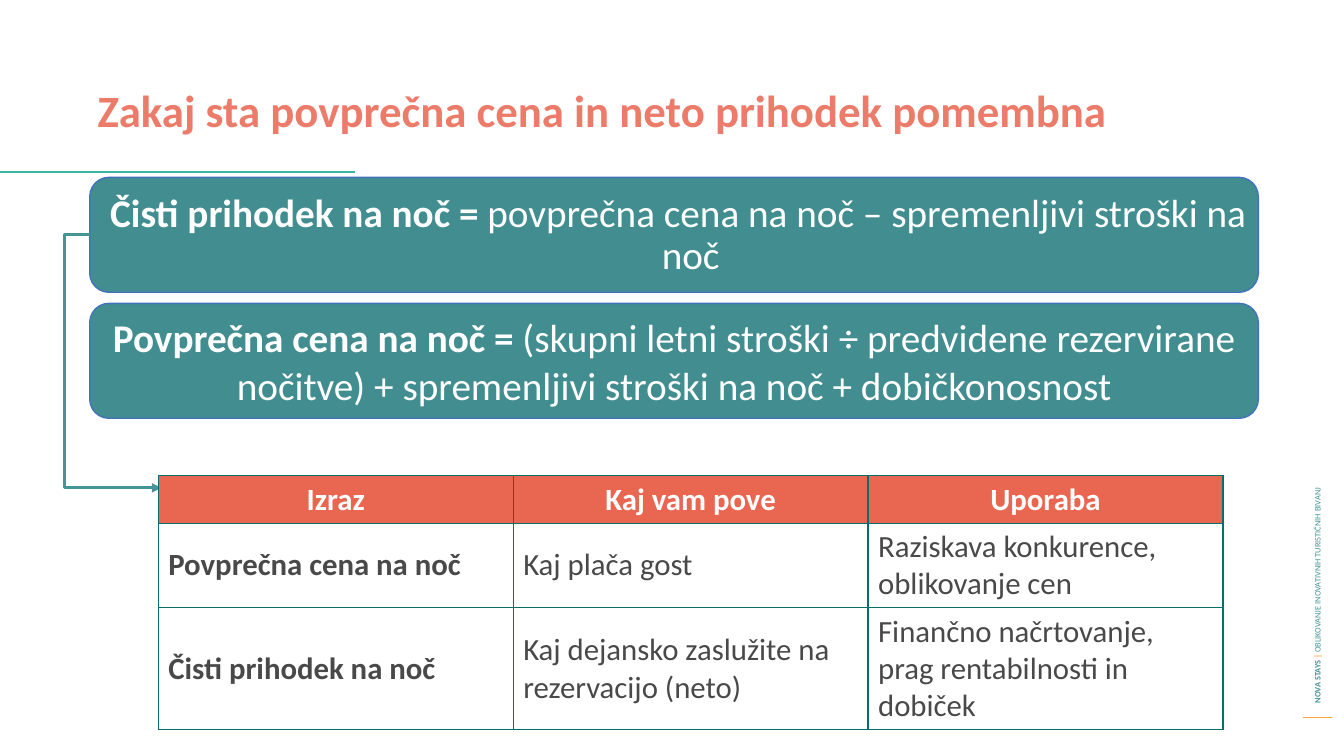
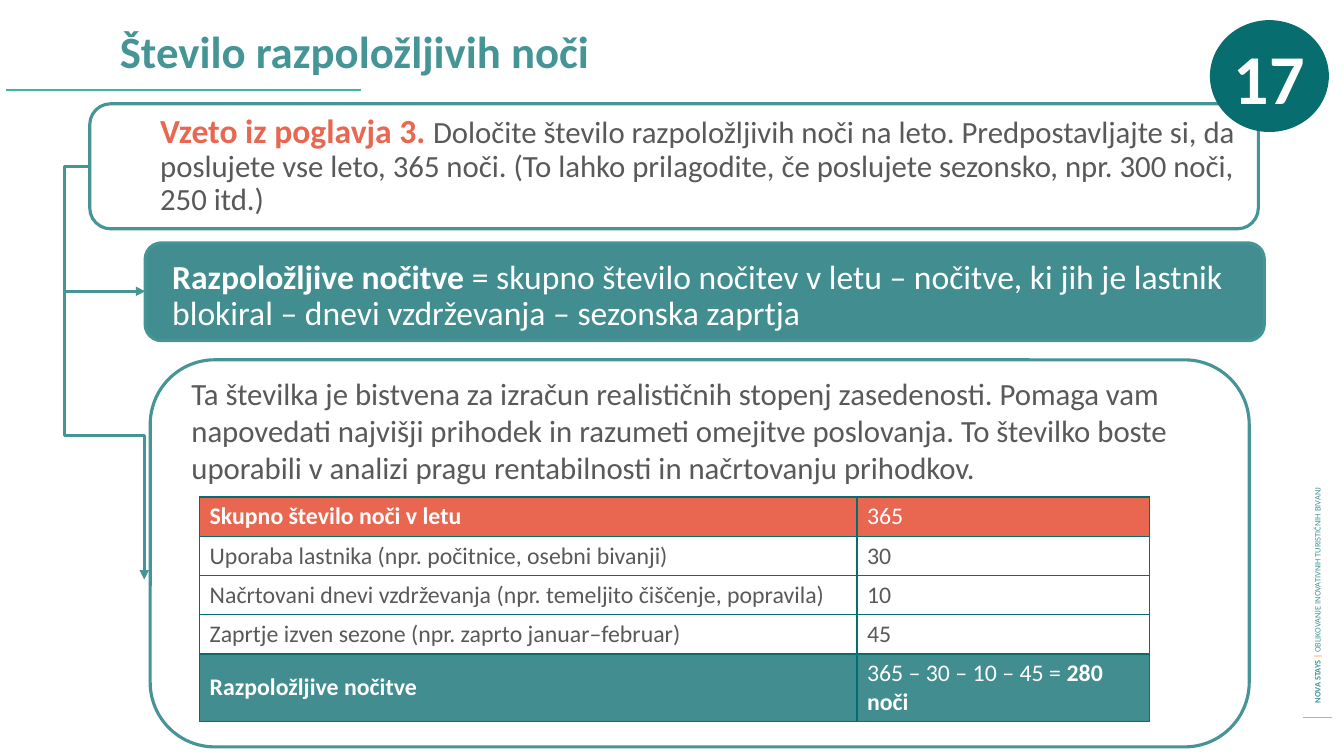
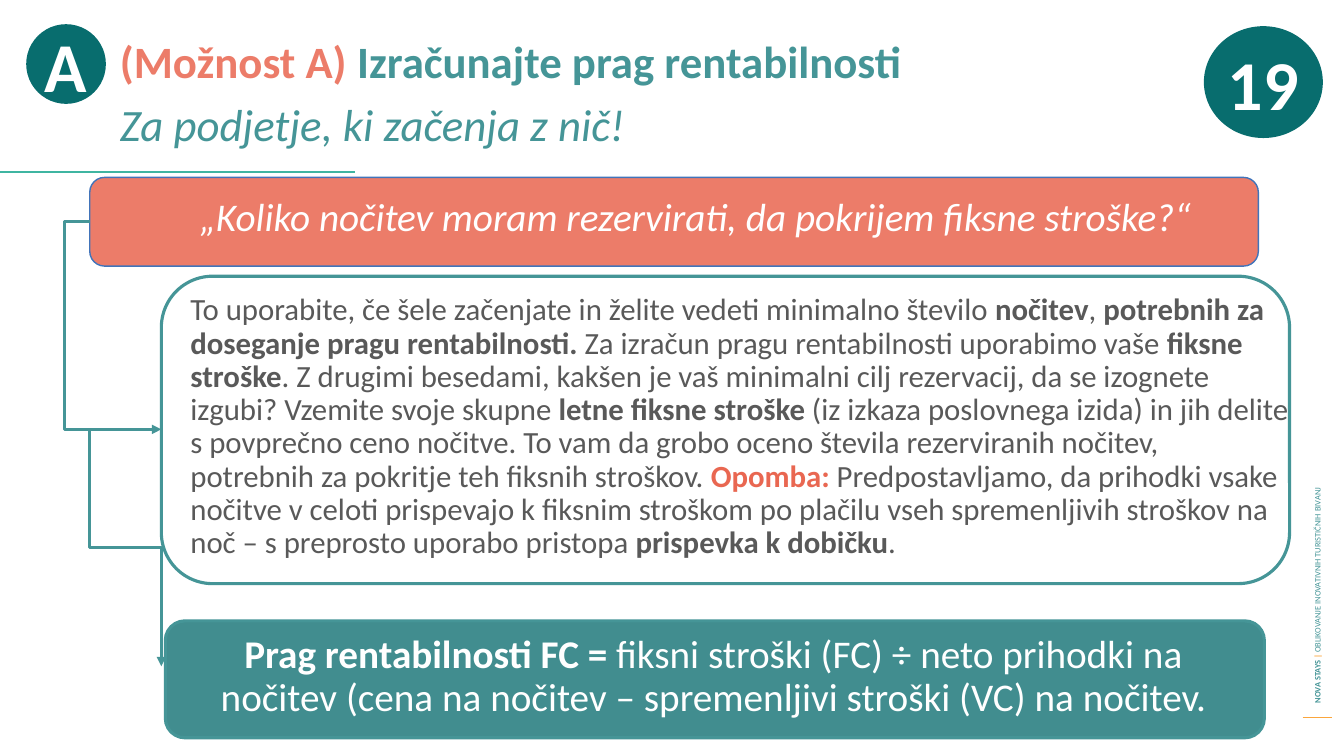
import pptx
import pptx.util
import pptx.dml.color
import pptx.enum.shapes
import pptx.enum.text
from lxml import etree
from pptx.oxml.ns import qn

Inches = pptx.util.Inches
Pt = pptx.util.Pt
SHAPE = pptx.enum.shapes.MSO_SHAPE
CONNECTOR = pptx.enum.shapes.MSO_CONNECTOR
ALIGN = pptx.enum.text.PP_ALIGN
ANCHOR = pptx.enum.text.MSO_ANCHOR

FONT = "Calibri"
TEAL, DEEP, PANEL, RULE = "459597", "086D6E", "418D8F", "3FB5A1"
CORAL, SALMON, AMBER, BLUE = "E96751", "EC7C69", "FBA63D", "4174BA"
GREY, DARK, WHITE = "595959", "494949", "FFFFFF"
OUTSET = 0.25
BOLD = {"bold": True}
FORMULA = {"size": 28, "color": WHITE}
BODY = {"size": 22, "color": GREY}
TITLE = {"size": 32, "color": TEAL, "bold": True}


def rgb(value):
    return pptx.dml.color.RGBColor.from_string(value)


def add_runs(p, runs, base):
    """Add (text, overrides) runs, or plain strings, on top of the base format."""
    for run in runs:
        text, changes = (run, {}) if isinstance(run, str) else run
        r = p.add_run()
        r.text = text
        formats = {"name": FONT, "bold": False, **base, **changes}
        r.font.color.rgb = rgb(formats.pop("color"))
        formats["size"] = Pt(formats["size"])
        for key, value in formats.items():
            setattr(r.font, key, value)


def fill_text(tf, paragraphs, base, anchor=ANCHOR.TOP, hanging=False, **layout):
    tf.word_wrap = True
    tf.vertical_anchor = anchor
    for i, runs in enumerate(paragraphs):
        p = tf.paragraphs[0] if i == 0 else tf.add_paragraph()
        if hanging:
            pPr = p._p.get_or_add_pPr()
            pPr.set("marL", str(Inches(0.25)))
            pPr.set("indent", str(-Inches(0.25)))
        for key, value in layout.items():
            setattr(p, key, value)
        if i:
            p.space_before = Pt(10)
        add_runs(p, runs, base)


def add_text(s, box, paragraphs, base, **layout):
    sp = s.shapes.add_textbox(*map(Inches, box))
    fill_text(sp.text_frame, paragraphs, base, **layout)
    return sp


def add_panel(s, box, fill=None, line=TEAL, width=2.25,
              kind=SHAPE.FLOWCHART_ALTERNATE_PROCESS):
    sp = s.shapes.add_shape(kind, *map(Inches, box))
    sp.shadow.inherit = False
    if fill:
        sp.fill.solid()
        sp.fill.fore_color.rgb = rgb(fill)
    else:
        sp.fill.background()
    if line:
        sp.line.color.rgb = rgb(line)
        sp.line.width = Pt(width)
    else:
        sp.line.fill.background()
    return sp


def add_badge(s, box, label):
    sp = add_panel(s, box, DEEP, line=None, kind=SHAPE.OVAL)
    tf = sp.text_frame
    fill_text(tf, [[label]], {"size": 50, "color": WHITE, "bold": True},
              anchor=ANCHOR.MIDDLE, alignment=ALIGN.CENTER)
    tf.word_wrap = False
    for side in ("left", "top", "right", "bottom"):
        setattr(tf, "margin_" + side, 0)


def add_line(s, start, end, color, width, kind=CONNECTOR.STRAIGHT):
    cxn = s.shapes.add_connector(kind, *map(Inches, (*start, *end)))
    cxn.line.color.rgb = rgb(color)
    cxn.line.width = Pt(width)
    etree.SubElement(cxn._element.spPr, qn("a:effectLst"))
    return cxn


def add_elbow(s, start, end, down_first=False):
    """Arrow that leaves to the left of start, or downwards if down_first."""
    (x1, y1), (x2, y2) = start, end
    adjust = -OUTSET / (x2 - x1)
    if down_first:
        adjust = 0.5
        cx, cy, half_w, half_h = (x1 + x2) / 2, (y1 + y2) / 2, (y2 - y1) / 2, (x2 - x1) / 2
        start, end = (cx + half_w, cy - half_h), (cx - half_w, cy + half_h)
    cxn = add_line(s, start, end, TEAL, 2.25, CONNECTOR.ELBOW)
    spPr = cxn._element.spPr
    if down_first:
        spPr.find(qn("a:xfrm")).set("rot", str(270 * 60000))
    guides = spPr.find(qn("a:prstGeom")).find(qn("a:avLst"))
    etree.SubElement(guides, qn("a:gd"), name="adj1", fmla=f"val {round(adjust * 100000)}")
    etree.SubElement(spPr.find(qn("a:ln")), qn("a:tailEnd"), type="triangle")


def add_borders(cell):
    tcPr = cell._tc.get_or_add_tcPr()
    for side in "LRTB":
        ln = etree.SubElement(tcPr, qn("a:ln" + side), w=str(Pt(1)))
        solid = etree.SubElement(ln, qn("a:solidFill"))
        etree.SubElement(solid, qn("a:srgbClr"), val=DEEP)


def add_grid(s, left, top, widths, heights, rows, size, color, fills, centred_head=False):
    """Bordered table; fills maps a row number to its colour and gives it white text."""
    frame = s.shapes.add_table(len(rows), len(widths), *map(
        Inches, (left, top, sum(widths), sum(heights))))
    table = frame.table
    table.first_row = table.horz_banding = False
    for column, width in zip(table.columns, widths):
        column.width = Inches(width)
    for i, (row, height) in enumerate(zip(rows, heights)):
        table.rows[i].height = Inches(height)
        for j, runs in enumerate(row):
            cell = table.cell(i, j)
            add_borders(cell)
            cell.vertical_anchor = ANCHOR.MIDDLE
            if i in fills:
                cell.fill.solid()
                cell.fill.fore_color.rgb = rgb(fills[i])
            else:
                cell.fill.background()
            p = cell.text_frame.paragraphs[0]
            if centred_head and i == 0:
                p.alignment = ALIGN.CENTER
            add_runs(p, runs, {"size": size, "color": WHITE if i in fills else color})


def add_slide(prs, title_at, title, rule_at):
    """Blank slide with the side footer, the title and its rule."""
    s = prs.slides.add_slide(prs.slide_layouts[6])
    add_line(s, (12.92, 7.12), (13.21, 7.12), AMBER, 0.75)
    footer = add_text(s, (10.18, 4.09, 5.77, 0.2), [[
        ("NOVA STAYS ", BOLD), ("| ", {"color": "FBA63B", "bold": True}),
        "OBLIKOVANJE INOVATIVNIH TURISTIČNIH BIVANJ"]],
        {"size": 6, "color": TEAL}, anchor=ANCHOR.MIDDLE)
    footer.rotation = 270
    add_text(s, (*title_at, 11.61, 0.88), title, TITLE, line_spacing=0.9)
    x, y = rule_at
    add_line(s, rule_at, (x + 3.52, y), RULE, 1.5)
    return s


def build_price_slide(prs):
    s = add_slide(prs, (0.87, 0.83),
                  [[("Zakaj sta povprečna cena in neto prihodek pomembna", {"color": SALMON})]],
                  (0, 1.71))
    add_panel(s, (0.89, 1.76, 11.59, 1.14), PANEL, BLUE, 1)
    add_text(s, (0.92, 1.87, 11.61, 0.88), [[
        ("Čisti prihodek na noč = ", BOLD),
        "povprečna cena na noč – spremenljivi stroški na noč"]],
        FORMULA, hanging=True, alignment=ALIGN.CENTER, line_spacing=0.9)
    average = add_panel(s, (0.89, 3.01, 11.59, 1.14), PANEL, BLUE, 1)
    fill_text(average.text_frame, [[
        ("Povprečna cena na noč = ", BOLD),
        "(skupni letni stroški ÷ predvidene rezervirane nočitve) + spremenljivi "
        "stroški na noč + dobičkonosnost"]],
        FORMULA, anchor=ANCHOR.MIDDLE, alignment=ALIGN.CENTER, space_after=Pt(12))
    add_elbow(s, (0.89, 2.33), (1.6, 4.84))
    add_grid(s, 1.57, 4.72, [3.52] * 3, [0.47, 0.84, 1.21], [
        [[(head, BOLD)] for head in ("Izraz", "Kaj vam pove", "Uporaba")],
        [[("Povprečna cena na noč", BOLD)], ["Kaj plača gost"],
         ["Raziskava konkurence, oblikovanje cen"]],
        [[("Čisti prihodek na noč", BOLD)], ["Kaj dejansko zaslužite na rezervacijo (neto)"],
         ["Finančno načrtovanje, prag rentabilnosti in dobiček"]],
    ], 22, DARK, {0: CORAL}, centred_head=True)


def build_nights_slide(prs):
    s = add_slide(prs, (1.09, 0.25), [["Število razpoložljivih noči"]], (0.06, 0.89))
    add_panel(s, (1.44, 2.41, 11.1, 0.97), PANEL)
    add_panel(s, (0.89, 1.03, 11.59, 1.24))
    add_text(s, (1.49, 1.09, 10.89, 0.88), [[
        ("Vzeto iz poglavja 3. ", {"size": 24, "color": CORAL, "bold": True}),
        "Določite število razpoložljivih noči na leto. Predpostavljajte si, da poslujete "
        "vse leto, 365 noči. (To lahko prilagodite, če poslujete sezonsko, npr. 300 noči, "
        "250 itd.)"]], BODY, line_spacing=0.9)
    add_text(s, (1.61, 2.5, 10.93, 0.88), [[
        ("Razpoložljive nočitve ", BOLD),
        "= skupno število nočitev v letu – nočitve, ki jih je lastnik blokiral – dnevi "
        "vzdrževanja – sezonska zaprtja"]],
        {"size": 24, "color": WHITE}, anchor=ANCHOR.MIDDLE, line_spacing=0.9)
    add_panel(s, (1.49, 3.57, 10.9, 3.84))
    add_elbow(s, (0.89, 1.65), (1.44, 2.89))
    add_elbow(s, (0.64, 2.89), (1.43, 5.75), down_first=True)
    add_text(s, (1.8, 3.67, 10.74, 0.88), [[
        "Ta številka je bistvena za izračun realističnih stopenj zasedenosti. Pomaga vam "
        "napovedati najvišji prihodek in razumeti omejitve poslovanja. To številko boste "
        "uporabili v analizi pragu rentabilnosti in načrtovanju prihodkov."]], BODY)
    add_grid(s, 1.98, 4.93, [6.52, 2.9], [0.39] * 4 + [0.67], [
        [[("Skupno število noči v letu", BOLD)], ["365"]],
        [["Uporaba lastnika (npr. počitnice, osebni bivanji)"], ["30"]],
        [["Načrtovani dnevi vzdrževanja (npr. temeljito čiščenje, popravila)"], ["10"]],
        [["Zaprtje izven sezone (npr. zaprto januar–februar)"], ["45"]],
        [[("Razpoložljive nočitve", BOLD)], ["365 – 30 – 10 – 45 =", (" 280 noči", BOLD)]],
    ], 17, GREY, {0: CORAL, 4: PANEL})
    add_badge(s, (12, 0.2, 1.18, 1.11), "17")


def build_break_even_slide(prs):
    s = add_slide(prs, (1.09, 0.35), [
        [("(Možnost A) ", {"color": SALMON}), "Izračunajte prag rentabilnosti"],
        [("Za podjetje, ki začenja z nič!", {"bold": False, "italic": True})]], (0, 1.71))
    add_panel(s, (0.89, 1.76, 11.59, 0.88), SALMON, BLUE, 1)
    add_text(s, (1.09, 1.91, 11.61, 0.88),
             [["„Koliko nočitev moram rezervirati, da pokrijem fiksne stroške?“"]],
             {**FORMULA, "italic": True}, hanging=True,
             alignment=ALIGN.CENTER, line_spacing=0.9)
    add_text(s, (1.79, 2.87, 11.1, 0.88), [[
        "To uporabite, če šele začenjate in želite vedeti minimalno število ",
        ("nočitev", BOLD), ",", (" potrebnih za doseganje pragu rentabilnosti. ", BOLD),
        "Za izračun pragu rentabilnosti uporabimo vaše ", ("fiksne stroške", BOLD),
        ". Z drugimi besedami, kakšen je vaš minimalni cilj rezervacij, da se izognete "
        "izgubi? Vzemite svoje skupne ", ("letne fiksne stroške ", BOLD),
        "(iz izkaza poslovnega izida) in jih delite s povprečno ceno nočitve. To vam da "
        "grobo oceno števila rezerviranih nočitev, potrebnih za pokritje teh fiksnih "
        "stroškov. ", ("Opomba: ", {"color": CORAL, "bold": True}),
        "Predpostavljamo, da prihodki vsake nočitve v celoti prispevajo k fiksnim stroškom "
        "po plačilu vseh spremenljivih stroškov na noč – s preprosto uporabo pristopa ",
        ("prispevka k dobičku", BOLD), "."]], BODY, line_spacing=0.9)
    add_panel(s, (1.6, 2.74, 11.19, 3.05))
    add_panel(s, (1.64, 6.16, 10.9, 1.16), PANEL)
    add_elbow(s, (0.89, 2.2), (1.6, 4.26))
    add_elbow(s, (0.89, 4.26), (1.6, 6.61), down_first=True)
    add_badge(s, (0.26, 0.24, 0.79, 0.79), "A")
    add_text(s, (1.76, 6.25, 10.63, 0.88), [[
        ("Prag rentabilnosti FC = ", BOLD),
        "fiksni stroški (FC) ÷ neto prihodki na nočitev (cena na nočitev – spremenljivi "
        "stroški (VC) na nočitev."]],
        FORMULA, alignment=ALIGN.CENTER, line_spacing=0.9)
    add_badge(s, (11.94, 0.26, 1.18, 1.11), "19")


def main():
    prs = pptx.Presentation()
    prs.slide_width, prs.slide_height = Inches(13.33), Inches(7.5)
    for build in (build_price_slide, build_nights_slide, build_break_even_slide):
        build(prs)
    prs.save("out.pptx")


if __name__ == "__main__":
    main()
